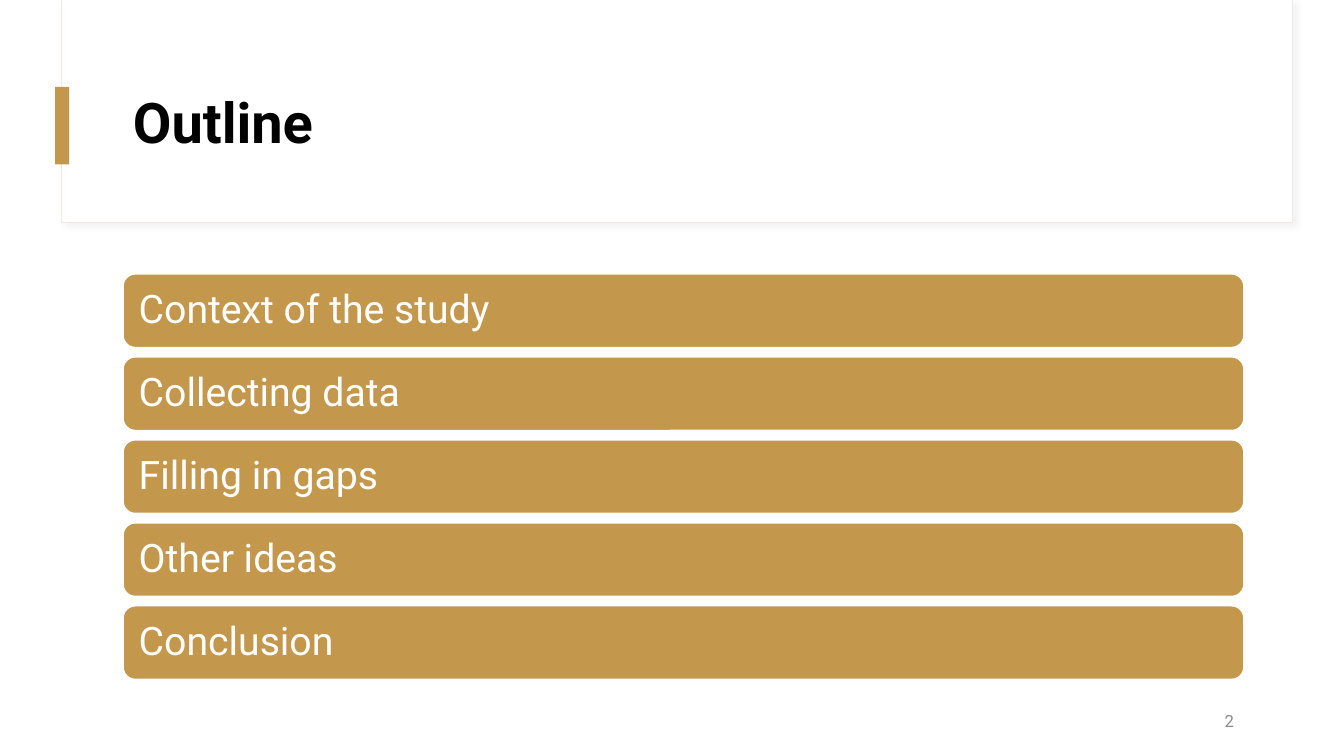
from lxml import etree
from pptx import Presentation
from pptx.dml.color import RGBColor
from pptx.enum.shapes import MSO_SHAPE as SHAPE
from pptx.enum.text import MSO_ANCHOR as ANCHOR, PP_ALIGN as ALIGN
from pptx.oxml import parse_xml
from pptx.oxml.ns import nsdecls
from pptx.util import Pt

GOLD, WHITE, BLACK = "C3984D", "FFFFFF", "000000"
TOPICS = ["Context of the study", "Collecting data", "Filling in gaps",
          "Other ideas", "Conclusion"]


def rgb(color):
    return RGBColor.from_string(color)


def add_box(s, kind, box, fill, line=None, width=1):
    sp = s.shapes.add_shape(kind, *map(Pt, box))
    sp.shadow.inherit = False
    sp.fill.solid()
    sp.fill.fore_color.rgb = rgb(fill)
    if line:
        sp.line.color.rgb = rgb(line)
        sp.line.width = Pt(width)
    else:
        sp.line.fill.background()
    return sp


def add_shadow(sp, color, alpha, blur, dist, angle):
    effects = sp._element.spPr.find("{*}effectLst")
    shadow = parse_xml(
        f'<a:outerShdw {nsdecls("a")} blurRad="{Pt(blur)}" dist="{Pt(dist)}" '
        f'dir="{angle * 60000}" algn="tl" rotWithShape="0"/>')
    tint = etree.SubElement(shadow, shadow.tag.replace("outerShdw", "srgbClr"), val=color)
    etree.SubElement(tint, shadow.tag.replace("outerShdw", "alpha"), val=str(alpha * 1000))
    effects.append(shadow)


def set_text(sp, text, size, color, bold=False, align=ALIGN.LEFT, inset=7.2, spacing=0.9):
    tf = sp.text_frame
    tf.word_wrap = True
    tf.vertical_anchor = ANCHOR.MIDDLE
    tf.margin_left = tf.margin_right = Pt(inset)
    tf.margin_top = tf.margin_bottom = Pt(min(inset, 8.64) if inset > 7.2 else 3.6)
    tf.text = text
    p = tf.paragraphs[0]
    p.alignment = align
    p.line_spacing = spacing
    font = p.runs[0].font
    font.name, font.size, font.bold = "Roboto", Pt(size), bold
    font.color.rgb = rgb(color)


def add_header(s, box, title):
    x, y, w, h = box
    card = add_box(s, SHAPE.RECTANGLE, box, WHITE, "EFEBE3", 0.75)
    add_shadow(card, "D9D9D9", 30, 4, 3, 45)
    add_box(s, SHAPE.RECTANGLE, (x + 0.5, y, w - 1, h - 0.5), WHITE)
    add_box(s, SHAPE.RECTANGLE, (x - 4.5, y + 62, 10, 55.5), GOLD)
    tb = s.shapes.add_textbox(*map(Pt, (x + 44, y + 43.2, w - 78.5, 92.8)))
    set_text(tb, title, 40, BLACK, bold=True)


def add_topics(s, box, topics, gap=6.7):
    x, y, w, h = box
    bar_h = (h - gap * (len(topics) - 1)) / len(topics)
    for i, topic in enumerate(topics):
        bar_y = y + i * (bar_h + gap)
        bar = add_box(s, SHAPE.ROUNDED_RECTANGLE, (x, bar_y, w, bar_h), GOLD, WHITE)
        set_text(bar, topic, 28, WHITE, inset=8.64)


def add_page_number(s, box, number):
    tb = s.shapes.add_textbox(*map(Pt, box))
    set_text(tb, str(number), 12, "8C8C8C", align=ALIGN.RIGHT, spacing=1.0)


def main():
    prs = Presentation()
    prs.slide_width, prs.slide_height = Pt(960), Pt(540)
    s = prs.slides.add_slide(prs.slide_layouts[6])
    add_header(s, (43.9, 0, 879.4, 159), "Outline")
    add_topics(s, (87.9, 195.7, 800.6, 289.6), TOPICS)
    add_page_number(s, (672.5, 500.5, 216, 28.8), 2)
    prs.save("out.pptx")


if __name__ == "__main__":
    main()
